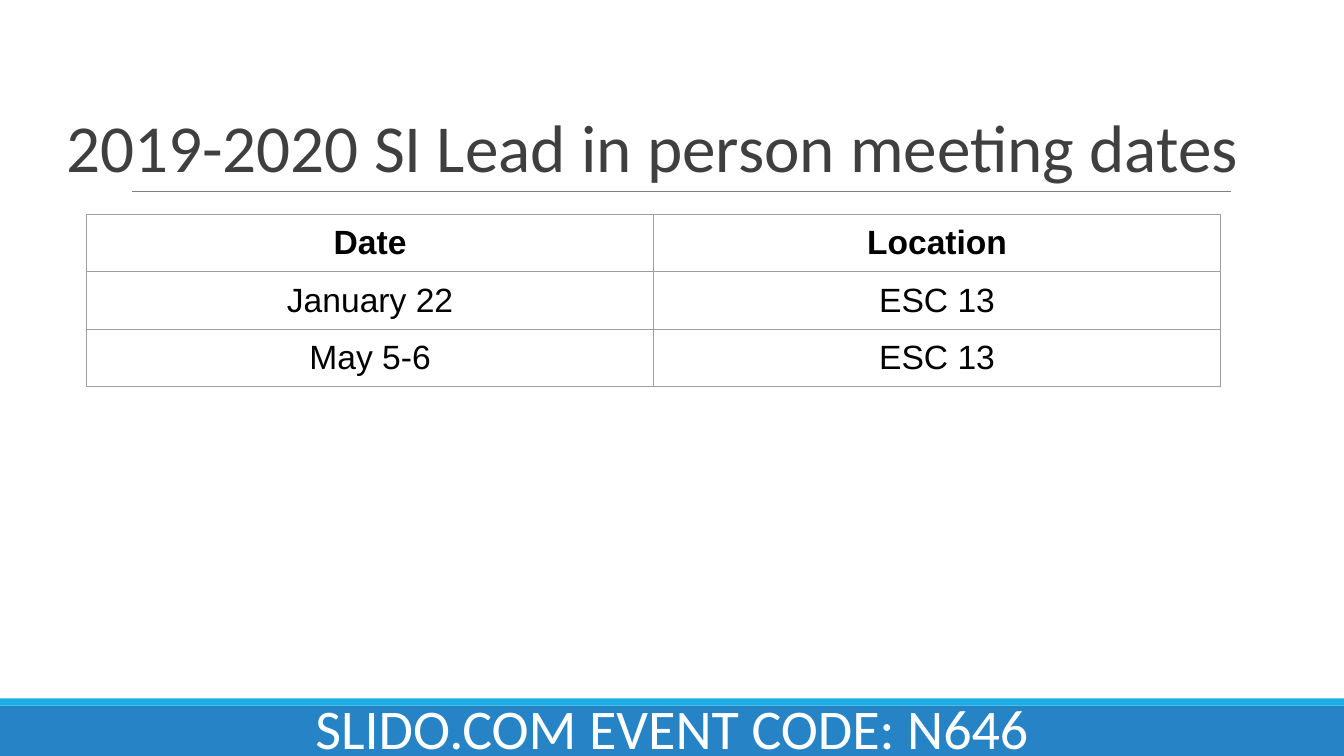
"""Build the slide of in-person meeting dates."""
from lxml.etree import SubElement
from pptx import Presentation
from pptx.dml.color import RGBColor
from pptx.enum.shapes import MSO_CONNECTOR, MSO_SHAPE
from pptx.enum.text import MSO_ANCHOR, MSO_AUTO_SIZE, PP_ALIGN
from pptx.oxml import parse_xml
from pptx.oxml.ns import nsdecls, qn
from pptx.util import Cm, Pt

WIDTH, HEIGHT = 33.87, 19.05
TITLE = dict(name="Calibri", size=Pt(48), bold=False)
EVENT = dict(name="Calibri", size=Pt(40), bold=False)
CELL = dict(name="Arial", size=Pt(24), bold=False)
HEADER = dict(CELL, bold=True)
MEETINGS = [("Date", "Location"), ("January 22", "ESC 13"), ("May 5-6", "ESC 13")]


def paint(color_format, color):
    color_format.rgb = RGBColor.from_string(color)


def write(frame, text, style, color, align):
    frame.word_wrap = True
    para = frame.paragraphs[0]
    para.alignment = align
    span = para.add_run()
    span.text = text
    for key, value in style.items():
        setattr(span.font, key, value)
    paint(span.font.color, color)
    return para


def add_band(page, top, height, color):
    band = page.shapes.add_shape(MSO_SHAPE.RECTANGLE, 0, Cm(top), Cm(WIDTH), Cm(height))
    band.shadow.inherit = False
    band.fill.solid()
    paint(band.fill.fore_color, color)
    band.line.fill.background()


def add_rule(page, left, right, top, color):
    rule = page.shapes.add_connector(
        MSO_CONNECTOR.STRAIGHT, Cm(left), Cm(top), Cm(right), Cm(top))
    rule.line.width = Pt(0.75)
    paint(rule.line.color, color)
    SubElement(rule._element.spPr, qn("a:effectLst"))


def add_title(page, text):
    title = page.shapes.title
    title.left, title.top, title.width, title.height = Cm(1.42), Cm(0.79), Cm(31.19), Cm(4.04)
    title.text_frame.vertical_anchor = MSO_ANCHOR.BOTTOM
    title.text_frame.auto_size = MSO_AUTO_SIZE.NONE
    para = write(title.text_frame, text, TITLE, "3F3F3F", PP_ALIGN.LEFT)
    para.line_spacing = 0.85


def outline_cell(cell, color):
    properties = cell._tc.get_or_add_tcPr()
    for position, side in enumerate(("lnL", "lnR", "lnT", "lnB")):
        properties.insert(position, parse_xml(
            f'<a:{side} {nsdecls("a")} w="{Pt(0.75)}"><a:solidFill>'
            f'<a:srgbClr val="{color}"/></a:solidFill></a:{side}>'))


def add_meetings(page, rows):
    table = page.shapes.add_table(
        len(rows), len(rows[0]), Cm(2.18), Cm(5.4), Cm(28.58), Cm(1.45 * len(rows))).table
    for row_index, row in enumerate(rows):
        for column_index, text in enumerate(row):
            cell = table.cell(row_index, column_index)
            for side in ("left", "right", "top", "bottom"):
                setattr(cell, f"margin_{side}", Cm(0.25))
            cell.fill.background()
            outline_cell(cell, "9E9E9E")
            style = CELL if row_index else HEADER
            write(cell.text_frame, text, style, "000000", PP_ALIGN.CENTER)


def add_event_code(page, text):
    box = page.shapes.add_textbox(0, Cm(17.35), Cm(WIDTH), Cm(1.96))
    write(box.text_frame, text, EVENT, "FFFFFF", PP_ALIGN.CENTER)


def main():
    deck = Presentation()
    deck.slide_width, deck.slide_height = Cm(WIDTH), Cm(HEIGHT)
    page = deck.slides.add_slide(deck.slide_layouts[5])
    add_band(page, 17.78, 1.27, "2683C6")
    add_band(page, 17.6, 0.18, "1CADE4")
    add_rule(page, 3.33, 31.01, 4.83, "7F7F7F")
    add_title(page, "2019-2020 SI Lead in person meeting dates")
    add_meetings(page, MEETINGS)
    add_event_code(page, "SLIDO.COM EVENT CODE: N646")
    deck.save("out.pptx")


if __name__ == "__main__":
    main()
